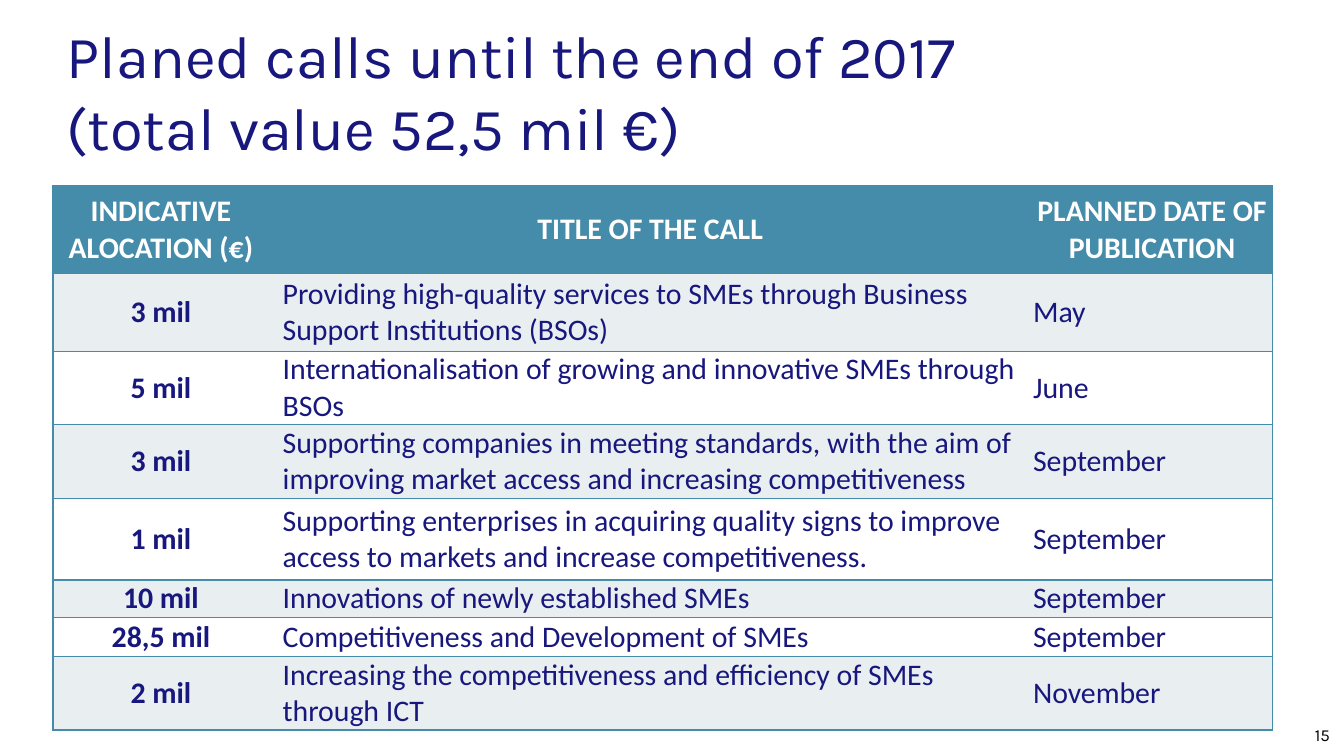
from dataclasses import dataclass

from lxml import etree
from pptx import Presentation
from pptx import util as u
from pptx.dml.color import RGBColor
from pptx.enum import text
from pptx.oxml import ns


@dataclass(frozen=True)
class Theme:
    navy: str = "17177D"
    teal: str = "448CA9"
    band: str = "E9EEF1"
    white: str = "FFFFFF"
    black: str = "000000"
    heading_font: str = "Karla"
    table_font: str = "Calibri"
    title_size: int = 32
    table_size: int = 16
    number_size: int = 9


theme = Theme()
PX = 9525
LEFT, CENTER, RIGHT = text.PP_ALIGN.LEFT, text.PP_ALIGN.CENTER, text.PP_ALIGN.RIGHT


def add_run(paragraph, words, font, size, color, align, bold=False):
    paragraph.alignment = align
    run = paragraph.add_run()
    run.text = words
    run.font.name = font
    run.font.size = u.Pt(size)
    run.font.bold = bold
    run.font.color.rgb = RGBColor.from_string(color)


def set_borders(cell, visible_sides):
    properties = cell._tc.get_or_add_tcPr()
    for position, side in enumerate("LRTB"):
        line = etree.Element(ns.qn(f"a:ln{side}"), w=str(u.Pt(1)))
        if side in visible_sides:
            fill = etree.SubElement(line, ns.qn("a:solidFill"))
            etree.SubElement(fill, ns.qn("a:srgbClr"), val=theme.teal)
        else:
            etree.SubElement(line, ns.qn("a:noFill"))
        properties.insert(position, line)


deck = Presentation()
deck.slide_width, deck.slide_height = 960 * PX, 540 * PX
slide = deck.slides.add_slide(deck.slide_layouts[5])

title = slide.shapes.title
title.left, title.top, title.width, title.height = 38 * PX, 20 * PX, 833 * PX, 90 * PX
heading = title.text_frame
heading.word_wrap = True
heading.auto_size = text.MSO_AUTO_SIZE.NONE
heading.vertical_anchor = text.MSO_ANCHOR.MIDDLE
for index, words in enumerate(["Planed calls until the end of 2017", "(total value 52,5 mil €)"]):
    paragraph = heading.add_paragraph() if index else heading.paragraphs[0]
    add_run(paragraph, words, theme.heading_font, theme.title_size, theme.navy, LEFT)

calls = [
    ("INDICATIVE ALOCATION (€)", "TITLE OF THE CALL", "PLANNED DATE OF PUBLICATION"),
    ("3 mil", "Providing high-quality services to SMEs through Business Support Institutions (BSOs)", "May"),
    ("5 mil", "Internationalisation of growing and innovative SMEs through BSOs", "June"),
    ("3 mil", "Supporting companies in meeting standards, with the aim of improving market access "
     "and increasing competitiveness", "September"),
    ("1 mil", "Supporting enterprises in acquiring quality signs to improve access to markets "
     "and increase competitiveness.", "September"),
    ("10 mil", "Innovations of newly established SMEs", "September"),
    ("28,5 mil", "Competitiveness and Development of SMEs", "September"),
    ("2 mil", "Increasing the competitiveness and efficiency of SMEs through ICT", "November"),
]
column_widths = [154, 545, 172]
row_heights = [62, 56, 52, 53, 58, 27, 28, 52]
column_borders = ["LTB", "TB", "RTB"]

schedule = slide.shapes.add_table(
    len(calls), len(column_widths), 38 * PX, 133 * PX,
    sum(column_widths) * PX, sum(row_heights) * PX).table
for column, width in zip(schedule.columns, column_widths):
    column.width = width * PX
for row, height in zip(schedule.rows, row_heights):
    row.height = height * PX

for row_index, call in enumerate(calls):
    is_header = row_index == 0
    row_fill = theme.teal if is_header else theme.band if row_index % 2 else theme.white
    for column_index, words in enumerate(call):
        cell = schedule.cell(row_index, column_index)
        cell.margin_left = cell.margin_right = PX
        cell.margin_top = cell.margin_bottom = 0
        cell.vertical_anchor = text.MSO_ANCHOR.MIDDLE
        cell.fill.solid()
        cell.fill.fore_color.rgb = RGBColor.from_string(row_fill)
        set_borders(cell, column_borders[column_index])
        emphasis = is_header or column_index == 0
        paragraph = cell.text_frame.paragraphs[0]
        if column_index == 1 and not is_header:
            paragraph._p.get_or_add_pPr().set("marL", str(9 * PX))
        add_run(paragraph, words, theme.table_font, theme.table_size,
                theme.white if is_header else theme.navy,
                CENTER if emphasis else LEFT, emphasis)

page_number = slide.shapes.add_textbox(727 * PX, 518 * PX, 223 * PX, 22 * PX).text_frame
page_number.word_wrap = True
page_number.margin_left = page_number.margin_right = 0
page_number.margin_top = page_number.margin_bottom = 0
add_run(page_number.paragraphs[0], "15", theme.heading_font, theme.number_size, theme.black, RIGHT)

deck.save("out.pptx")
